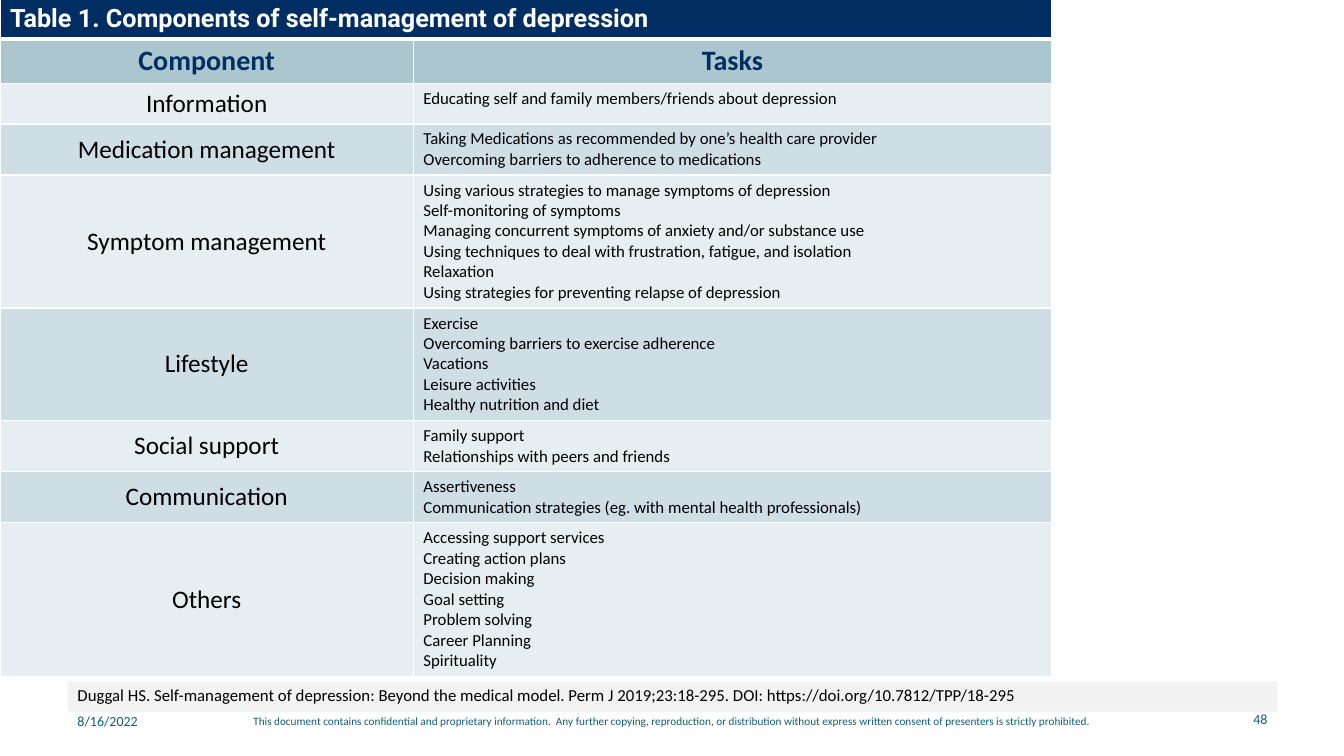
import lxml.etree
import pptx
import pptx.dml.color
import pptx.enum.shapes
import pptx.enum.text
import pptx.oxml.ns
import pptx.util

Inches = pptx.util.Inches
Align = pptx.enum.text.PP_ALIGN
Anchor = pptx.enum.text.MSO_ANCHOR

TITLE = "Table 1. Components of self-management of depression"
HEADINGS = ("Component", "Tasks")
COMPONENTS = [
    ("Information", ["Educating self and family members/friends about depression"]),
    ("Medication management", [
        "Taking Medications as recommended by one’s health care provider",
        "Overcoming barriers to adherence to medications",
    ]),
    ("Symptom management", [
        "Using various strategies to manage symptoms of depression",
        "Self-monitoring of symptoms",
        "Managing concurrent symptoms of anxiety and/or substance use",
        "Using techniques to deal with frustration, fatigue, and isolation",
        "Relaxation",
        "Using strategies for preventing relapse of depression",
    ]),
    ("Lifestyle", [
        "Exercise",
        "Overcoming barriers to exercise adherence",
        "Vacations",
        "Leisure activities",
        "Healthy nutrition and diet",
    ]),
    ("Social support", ["Family support", "Relationships with peers and friends"]),
    ("Communication", [
        "Assertiveness",
        "Communication strategies (eg. with mental health professionals)",
    ]),
    ("Others", [
        "Accessing support services",
        "Creating action plans",
        "Decision making",
        "Goal setting",
        "Problem solving",
        "Career Planning",
        "Spirituality",
    ]),
]
CITATION = ("Duggal HS. Self-management of depression: Beyond the medical model. "
            "Perm J 2019;23:18-295. DOI: https://doi.org/10.7812/TPP/18-295")
FOOTERS = [
    ("8/16/2022", (0.67, 7.02, 1.01, 0.4), "footer", Align.LEFT),
    ("48", (11.66, 7, 1.01, 0.4), "footer", Align.RIGHT),
    ("This document contains confidential and proprietary information.  Any further copying, "
     "reproduction, or distribution without express written consent of presenters is strictly "
     "prohibited.", (1.68, 7.04, 9.98, 0.4), "notice", Align.CENTER),
]
COLUMN_WIDTHS = (4.1, 6.33)
ROW_HEIGHTS = (0.34, 0.36, 0.34, 0.42, 1.09, 0.92, 0.42, 0.42, 1.26)
TABLE_BOX = (0, -0.01, 10.43, 6.63)
CITATION_BOX = (0.67, 6.76, 12, 0.3)


class Theme:
    navy, teal, white, black, pale = "002E62", "135D7A", "FFFFFF", "000000", "F2F2F2"
    heading_tint, band_tints = 35, (10, 20)
    thin, thick = 1, 3
    text = {
        "title": ("Roboto", 18, white, True),
        "heading": ("Calibri", 20, navy, True),
        "component": ("Calibri", 18, black, False),
        "task": ("Calibri", 12, black, False),
        "footer": ("Calibri", 10, teal, False),
        "notice": ("Calibri", 8, teal, False),
    }


def rgb(value):
    return pptx.dml.color.RGBColor.from_string(value)


def write(frame, lines, style, alignment=Align.LEFT):
    name, size, color, bold = Theme.text[style]
    for index, line in enumerate(lines):
        paragraph = frame.add_paragraph() if index else frame.paragraphs[0]
        paragraph.alignment = alignment
        run = paragraph.add_run()
        run.text = line
        run.font.name = name
        run.font.size = pptx.util.Pt(size)
        run.font.bold = bold
        run.font.color.rgb = rgb(color)


def fill_solid(target, color):
    target.fill.solid()
    target.fill.fore_color.rgb = rgb(color)


def fill_tint(cell, color, opacity):
    qn = pptx.oxml.ns.qn
    fill_solid(cell, color)
    cell_fill = cell._tc.get_or_add_tcPr().find(qn("a:solidFill"))
    alpha = lxml.etree.SubElement(cell_fill.find(qn("a:srgbClr")), qn("a:alpha"))
    alpha.set("val", str(opacity * 1000))


def add_borders(cell, bottom):
    qn = pptx.oxml.ns.qn
    properties = cell._tc.get_or_add_tcPr()
    widths = {"L": Theme.thin, "R": Theme.thin, "T": Theme.thin, "B": bottom}
    for side, width in widths.items():
        line = lxml.etree.SubElement(properties, qn("a:ln" + side))
        line.set("w", str(pptx.util.Pt(width)))
        solid = lxml.etree.SubElement(line, qn("a:solidFill"))
        lxml.etree.SubElement(solid, qn("a:srgbClr")).set("val", Theme.white)


def add_component_table(slide):
    frame = slide.shapes.add_table(len(ROW_HEIGHTS), len(COLUMN_WIDTHS),
                                   *map(Inches, TABLE_BOX))
    table = frame.table
    table.first_row = table.horz_banding = False
    for column, width in zip(table.columns, COLUMN_WIDTHS):
        column.width = Inches(width)
    for row, height in zip(table.rows, ROW_HEIGHTS):
        row.height = Inches(height)
    frame.height = Inches(TABLE_BOX[3])

    for index, row in enumerate(table.rows):
        for cell in row.cells:
            add_borders(cell, Theme.thin if index else Theme.thick)

    title_cell = table.cell(0, 0)
    title_cell.merge(table.cell(0, 1))
    fill_solid(title_cell, Theme.navy)
    write(title_cell.text_frame, [TITLE], "title")

    for column, heading in enumerate(HEADINGS):
        cell = table.cell(1, column)
        fill_tint(cell, Theme.teal, Theme.heading_tint)
        write(cell.text_frame, [heading], "heading", Align.CENTER)

    for index, (component, tasks) in enumerate(COMPONENTS):
        component_cell, task_cell = table.rows[index + 2].cells
        for cell in (component_cell, task_cell):
            fill_tint(cell, Theme.teal, Theme.band_tints[index % 2])
        component_cell.vertical_anchor = Anchor.MIDDLE
        write(component_cell.text_frame, [component], "component", Align.CENTER)
        write(task_cell.text_frame, tasks, "task")


def add_citation(slide):
    shape = slide.shapes.add_shape(pptx.enum.shapes.MSO_SHAPE.RECTANGLE,
                                   *map(Inches, CITATION_BOX))
    shape.shadow.inherit = False
    shape.line.fill.background()
    fill_solid(shape, Theme.pale)
    shape.text_frame.word_wrap = True
    shape.text_frame.vertical_anchor = Anchor.MIDDLE
    write(shape.text_frame, [CITATION], "task")
    shape.text_frame.paragraphs[0].line_spacing = 0.9


def main():
    presentation = pptx.Presentation()
    presentation.slide_width = Inches(13.33)
    presentation.slide_height = Inches(7.5)
    slide = presentation.slides.add_slide(presentation.slide_layouts[6])
    add_component_table(slide)
    add_citation(slide)
    for text, box, style, alignment in FOOTERS:
        shape = slide.shapes.add_textbox(*map(Inches, box))
        shape.text_frame.word_wrap = True
        write(shape.text_frame, [text], style, alignment)
    presentation.save("out.pptx")


if __name__ == "__main__":
    main()
